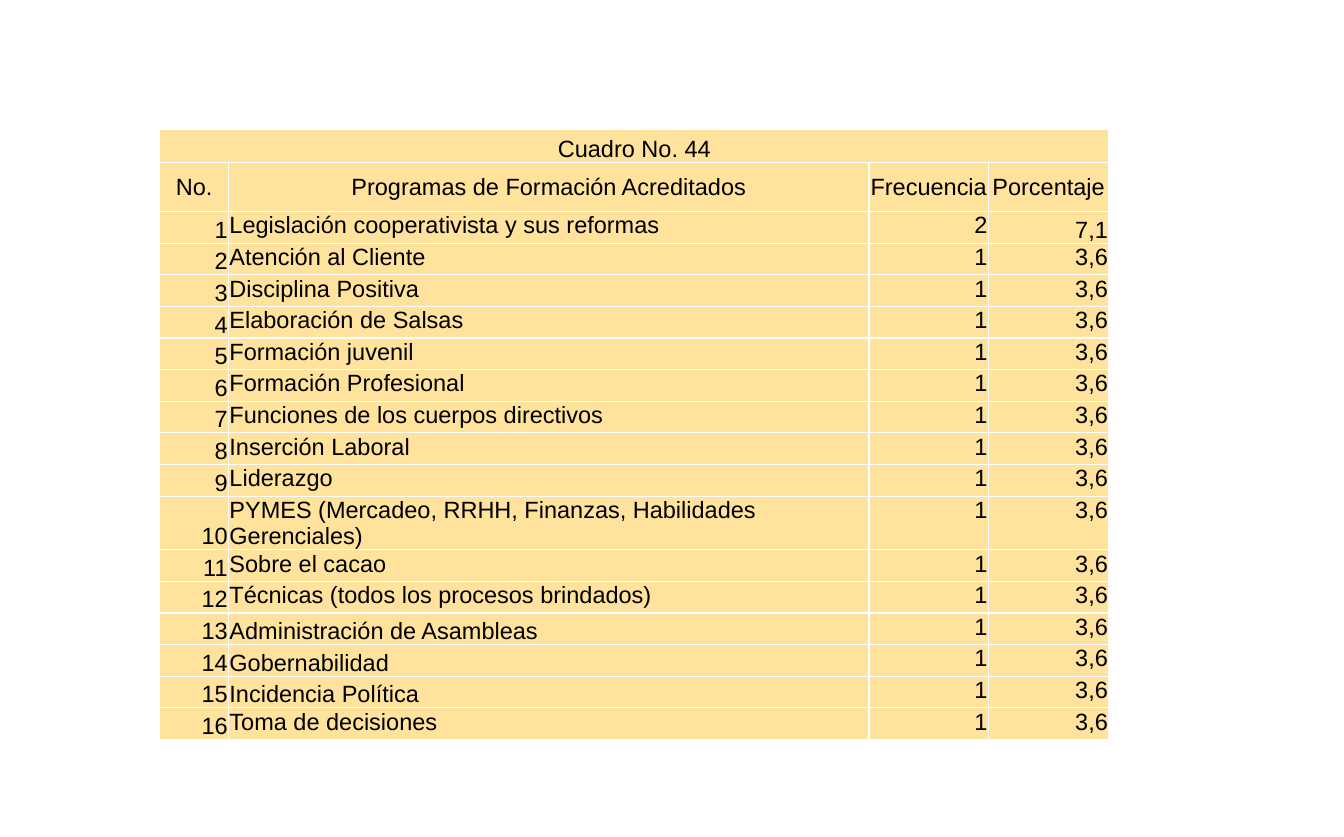
from dataclasses import dataclass

from lxml import etree
from pptx import Presentation
from pptx import util as u
from pptx.dml.color import RGBColor
from pptx.enum import text
from pptx.oxml import ns

LEFT, MID, RIGHT = text.PP_ALIGN.LEFT, text.PP_ALIGN.CENTER, text.PP_ALIGN.RIGHT
TOP, CENTRE, BASE = (text.MSO_ANCHOR.TOP, text.MSO_ANCHOR.MIDDLE,
                     text.MSO_ANCHOR.BOTTOM)


@dataclass
class Theme:
    font: str = "Arial"
    size: int = 18
    ink: str = "000000"
    sand: str = "FFE39D"
    rule: str = "FFFFFF"
    rule_width: int = 1


def write(frame, words, theme, align=LEFT):
    para = frame.paragraphs[0]
    para.alignment = align
    run = para.add_run()
    run.text = words
    run.font.name = theme.font
    run.font.size = u.Pt(theme.size)
    run.font.color.rgb = RGBColor.from_string(theme.ink)


class Sheet:
    """A slide on a grid of 1429 columns by 890 rows."""

    COLS, ROWS = 1429, 890

    def __init__(self, deck, theme):
        self.theme = theme
        self.slide = deck.slides.add_slide(deck.slide_layouts[6])
        self.col = deck.slide_width / self.COLS
        self.row = deck.slide_height / self.ROWS

    def table(self, left, top, widths, heights):
        x, y, w, h = (round(n) for n in (
            left * self.col, top * self.row,
            sum(widths) * self.col, sum(heights) * self.row))
        table = self.slide.shapes.add_table(
            len(heights), len(widths), x, y, w, h).table
        for col, width in zip(table.columns, widths):
            col.width = round(width * self.col)
        for row, height in zip(table.rows, heights):
            row.height = round(height * self.row)
        for cell in table.iter_cells():
            self.style(cell)
        return table

    def style(self, cell):
        """Set margins, borders and fill."""
        cell.margin_left = cell.margin_right = cell.margin_top = u.Inches(0.01)
        cell.margin_bottom = 0
        props = cell._tc.get_or_add_tcPr()
        for side in "LRTB":
            line = etree.SubElement(props, ns.qn(f"a:ln{side}"),
                                    w=str(u.Pt(self.theme.rule_width)))
            fill = etree.SubElement(line, ns.qn("a:solidFill"))
            etree.SubElement(fill, ns.qn("a:srgbClr"), val=self.theme.rule)
        cell.fill.solid()
        cell.fill.fore_color.rgb = RGBColor.from_string(self.theme.sand)

    def cell(self, cell, words, align, anchor):
        cell.vertical_anchor = anchor
        write(cell.text_frame, words, self.theme, align)


TITLE = "Cuadro No. 44"
HEADS = ["No.", "Programas de Formación Acreditados", "Frecuencia", "Porcentaje"]
COURSES = [
    "Legislación cooperativista y sus reformas",
    "Atención al Cliente",
    "Disciplina Positiva",
    "Elaboración de Salsas",
    "Formación juvenil",
    "Formación Profesional",
    "Funciones de los cuerpos directivos",
    "Inserción Laboral",
    "Liderazgo",
    "PYMES (Mercadeo, RRHH, Finanzas, Habilidades Gerenciales)",
    "Sobre el cacao",
    "Técnicas (todos los procesos brindados)",
    "Administración de Asambleas",
    "Gobernabilidad",
    "Incidencia Política",
    "Toma de decisiones",
]
LOW = range(13, 16)  # courses set at the foot of their cells
HEIGHT, TITLE_ROW, HEAD_ROW = 625, 35, 52


def main():
    deck = Presentation()
    deck.slide_width, deck.slide_height = u.Inches(14.29), u.Inches(8.9)
    sheet = Sheet(deck, Theme())

    step = (HEIGHT - TITLE_ROW - HEAD_ROW) / len(COURSES)
    table = sheet.table(170, 138, [73, 681, 127, 128],
                        [TITLE_ROW, HEAD_ROW] + [step] * len(COURSES))
    table.cell(0, 0).merge(table.cell(0, 3))
    sheet.cell(table.cell(0, 0), TITLE, MID, BASE)
    for col, head in enumerate(HEADS):
        sheet.cell(table.cell(1, col), head, MID, CENTRE)

    for num, course in enumerate(COURSES, 1):
        first = num == 1
        count, share = ("2", "7,1") if first else ("1", "3,6")
        entries = [
            (str(num), RIGHT, BASE),
            (course, LEFT, BASE if num in LOW else TOP),
            (count, RIGHT, TOP),
            (share, RIGHT, BASE if first else TOP),
        ]
        for col, entry in enumerate(entries):
            sheet.cell(table.cell(num + 1, col), *entry)

    deck.save("out.pptx")


if __name__ == "__main__":
    main()
